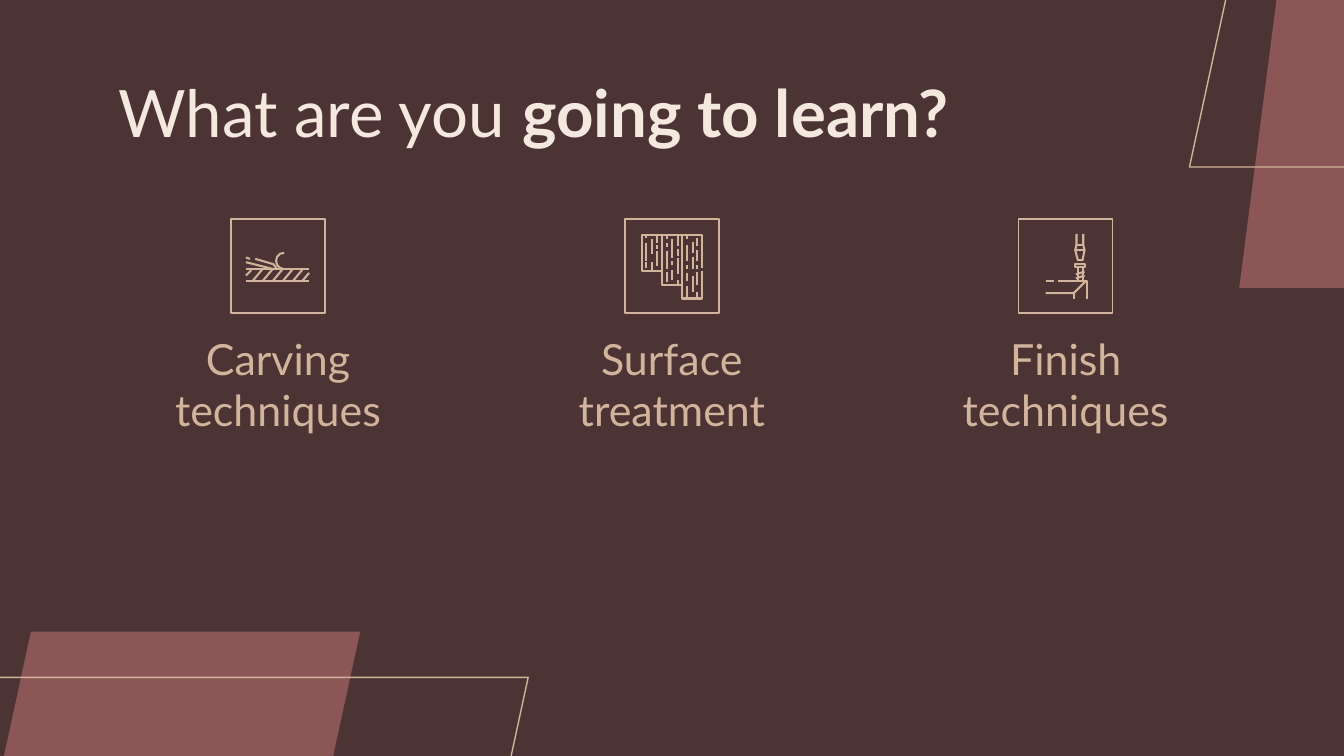
import pptx
import pptx.util
import pptx.dml.color
import pptx.enum.shapes
import pptx.enum.text
from lxml import etree

BACK, ROSE, SAND, CREAM = "4C3434", "8D5656", "D1B49B", "F5E8DE"
A = "{http://schemas.openxmlformats.org/drawingml/2006/main}"


def rgb(value):
    return pptx.dml.color.RGBColor.from_string(value)


class Deck:
    """Style and current slide; lengths are percent of the slide's size."""
    font = "Lato"
    line_width = pptx.util.Pt(0.75)
    stroke_width = pptx.util.Pt(1.1)

    def __init__(self, prs, layout):
        self.prs = prs
        self.s = prs.slides.add_slide(prs.slide_layouts[layout])
        fill = self.s.background.fill
        fill.solid()
        fill.fore_color.rgb = rgb(BACK)

    def box(self, x, y, w, h):
        pw, ph = self.prs.slide_width / 100, self.prs.slide_height / 100
        return [round(v) for v in (x * pw, y * ph, w * pw, h * ph)]

    def paint(self, sp, fill, line, width):
        sp.shadow.inherit = False
        if fill:
            sp.fill.solid()
            sp.fill.fore_color.rgb = rgb(fill)
        else:
            sp.fill.background()
        if line:
            sp.line.color.rgb = rgb(line)
            sp.line.width = width
        else:
            sp.line.fill.background()

    def shape(self, kind, area, fill=None, line=None):
        sp = self.s.shapes.add_shape(kind, *self.box(*area))
        self.paint(sp, fill, line, self.line_width)
        return sp

    def slanted(self, area, fill=None, line=None):
        sp = self.shape(pptx.enum.shapes.MSO_SHAPE.PARALLELOGRAM, area, fill, line)
        sp.adjustments[0] = 0.217

    def icon(self, x, y, strokes):
        """Draw open strokes, given in hundredths of an inch from the frame corner."""
        left, top = self.box(x, y, 0, 0)[:2]
        unit = pptx.util.Inches(0.01)
        paths = [[(left + px * unit, top + py * unit) for px, py in stroke]
                 for stroke in strokes]
        builder = self.s.shapes.build_freeform(*paths[0][0])
        for i, path in enumerate(paths):
            if i:
                builder.move_to(*path[0])
            builder.add_line_segments(path[1:], close=False)
        self.paint(builder.convert_to_shape(), None, SAND, self.stroke_width)

    def text(self, idx, area, runs, size, color, align, anchor):
        """Move and format a placeholder; runs are (text, bold) pairs."""
        sp = self.s.placeholders[idx]
        sp.left, sp.top, sp.width, sp.height = self.box(*area)
        tf = sp.text_frame
        tf.word_wrap = True
        tf.auto_size = pptx.enum.text.MSO_AUTO_SIZE.NONE
        tf.vertical_anchor = anchor
        tf.margin_left = tf.margin_right = pptx.util.Inches(0.1)
        tf.margin_top = tf.margin_bottom = pptx.util.Inches(0.1)
        p = tf.paragraphs[0]
        p.alignment = align
        p.space_before = pptx.util.Pt(0)
        pPr = p._p.get_or_add_pPr()
        pPr.set("marL", "0")
        pPr.set("indent", "0")
        etree.SubElement(pPr, A + "buNone")
        for words, bold in runs:
            r = p.add_run()
            r.text = words
            r.font.name = self.font
            r.font.size = pptx.util.Pt(size)
            r.font.bold = bold
            r.font.color.rgb = rgb(color)


def dashes(columns):
    return [[(x, a), (x, b)] for x, spans in columns.items() for a, b in spans]


# Icon strokes
CARVING = [
    [(11, 37), (58, 37)], [(11, 46), (58, 46)],
    [(11, 42), (15, 38)], [(53, 46), (58, 40)],
    [(11, 28.5), (14, 29.5)], [(18, 29.5), (31.5, 33.5), (34, 37)],
    [(11, 32), (31, 37)],
    [(39.5, 25), (36.5, 25.7), (34.2, 28), (33.5, 31), (34.2, 34), (36.5, 36.3), (39, 37)],
] + [[(16 + 7.5 * i, 46), (23.5 + 7.5 * i, 37)] for i in range(5)]

SURFACE = [
    [(27.5, 38.5), (13, 38.5), (13, 11.5), (57.5, 11.5), (57.5, 36)],
    [(27.5, 11.5), (27.5, 49), (42.5, 49)],
    [(42.5, 11.5), (42.5, 59), (57.5, 59), (57.5, 38.5)],
] + dashes({
    16: [(11, 14), (18, 31), (32, 36)],
    20: [(15, 26), (31.5, 38)],
    24: [(11, 18), (19, 22), (24, 35)],
    31: [(11, 15), (18, 21), (24, 37), (39, 47)],
    35: [(15, 29), (31, 34), (38, 45)],
    39.5: [(11, 20), (22, 27), (29, 41), (45, 48)],
    46: [(11, 15), (19, 31), (34, 37), (40, 46), (50, 58)],
    50.5: [(17, 25), (28, 37), (42, 54)],
    54: [(14, 20), (23, 31), (34, 37), (39, 49), (54, 58)],
})

FINISH = [
    [(43, 11), (43, 19), (42, 23), (44, 30.5), (47.5, 30.5), (49, 23), (48, 19), (48, 11)],
    [(43, 19), (48, 19)], [(42, 23), (49, 23)],
    [(42, 33.5), (49.5, 33.5), (49.5, 35.5), (42, 35.5), (42, 33.5)],
    [(44, 36), (44, 46)], [(47.5, 36), (47.5, 46)],
    [(42.5, 41), (49, 39)], [(42.5, 44), (49, 42)],
    [(20, 46), (26, 46)], [(29, 46), (50.5, 46), (50.5, 59.5)],
    [(20, 55), (41, 55), (50, 46)], [(41, 55), (41, 59.5)],
]

TOPICS = [("Carving techniques", CARVING), ("Surface treatment", SURFACE),
          ("Finish techniques", FINISH)]


def main():
    prs = pptx.Presentation()
    prs.slide_width = pptx.util.Inches(10)
    prs.slide_height = prs.slide_width * 9 // 16
    deck = Deck(prs, 4)
    align, anchor = pptx.enum.text.PP_ALIGN, pptx.enum.text.MSO_ANCHOR

    # Corner decorations
    deck.slanted((0, 83.56, 26.8, 18.84), fill=ROSE)
    deck.slanted((-2.1, 89.6, 41.4, 12.8), line=SAND)
    deck.slanted((92.2, 0, 12.8, 38.1), fill=ROSE)
    deck.slanted((88.5, -1.4, 17.2, 23.5), line=SAND)

    # Title
    deck.text(0, (7.8, 7.8, 84.4, 12.5),
              [("What are you ", False), ("going to learn?", True)],
              35, CREAM, align.LEFT, anchor.TOP)

    # Topic columns: framed icon above a centred label
    margin, width, pitch, frame = 7.8, 25.8, 29.3, 7
    for i, (label, strokes) in enumerate(TOPICS):
        x = margin + i * pitch
        frame_x = x + (width - frame) / 2
        deck.shape(pptx.enum.shapes.MSO_SHAPE.RECTANGLE,
                   (frame_x, 29, frame, frame * 16 / 9), line=SAND)
        deck.icon(frame_x, 29, strokes)
        deck.text(i + 1, (x, 45.2, width, 14.2), [(label, False)],
                  23, SAND, align.CENTER, anchor.BOTTOM)

    # Unused placeholder
    spare = deck.s.placeholders[4].element
    spare.getparent().remove(spare)

    prs.save("out.pptx")


if __name__ == "__main__":
    main()
